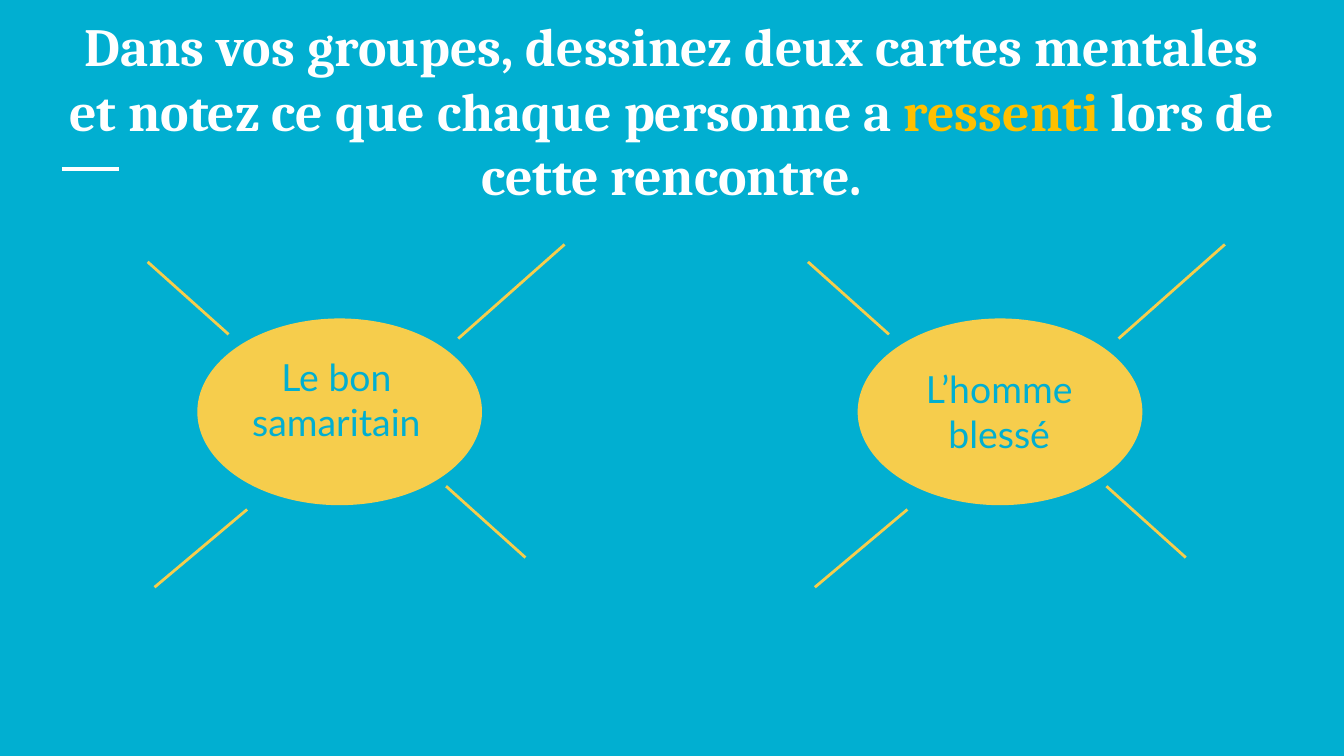
from pptx import Presentation
from pptx.dml.color import RGBColor
from pptx.enum.shapes import MSO_CONNECTOR as Link, MSO_SHAPE as Shape
from pptx.enum.text import MSO_ANCHOR as Anchor, PP_ALIGN as Align
from pptx.oxml.ns import qn
from pptx.util import Cm, Pt
from lxml.etree import SubElement

BLUE = RGBColor(0x01, 0xAF, 0xD1)
WHITE = RGBColor(0xFF, 0xFF, 0xFF)
GOLD = RGBColor(0xFF, 0xC0, 0x00)
SUN = RGBColor(0xF6, 0xCD, 0x4C)

TITLE = [
    ("Dans vos groupes, dessinez deux cartes mentales et notez ce que chaque personne a ", WHITE),
    ("ressenti", GOLD),
    (" lors de cette rencontre.", WHITE),
]
MAPS = [
    ("Le bon samaritain", (4.47, 6.45, 3.78, 2.24)),
    ("L’homme blessé", (16.74, 6.68, 4.29, 2.24)),
]
RAYS = [
    (4.32, 6.32, 2.79, 4.95),
    (9.93, 10.54, 8.43, 9.19),
    (2.92, 11.1, 4.67, 9.63),
    (8.66, 6.4, 10.67, 4.62),
]
OVAL = (3.73, 6.02, 5.38, 3.53)
STEP = 12.48


def add_text(slide, runs, box, font="Lato", size=20, bold=False):
    frame = slide.shapes.add_textbox(*map(Cm, box)).text_frame
    frame.word_wrap = True
    frame.vertical_anchor = Anchor.TOP
    frame.margin_left = frame.margin_right = Cm(0.25)
    frame.margin_top = frame.margin_bottom = Cm(0.25)
    para = frame.paragraphs[0]
    para.alignment = Align.CENTER
    for text, color in runs:
        run = para.add_run()
        run.text = text
        run.font.name = font
        run.font.size = Pt(size)
        run.font.bold = bold
        run.font.color.rgb = color


def add_line(slide, ends, color, width):
    line = slide.shapes.add_connector(Link.STRAIGHT, *map(Cm, ends))
    line.line.color.rgb = color
    line.line.width = Pt(width)
    SubElement(line._element.spPr, qn("a:effectLst"))


def add_oval(slide, box):
    oval = slide.shapes.add_shape(Shape.OVAL, *map(Cm, box))
    oval.shadow.inherit = False
    oval.fill.solid()
    oval.fill.fore_color.rgb = SUN
    oval.line.fill.background()


def main():
    deck = Presentation()
    deck.slide_width, deck.slide_height = Cm(25.4), Cm(14.29)
    slide = deck.slides.add_slide(deck.slide_layouts[6])
    slide.background.fill.solid()
    slide.background.fill.fore_color.rgb = BLUE

    add_line(slide, (1.17, 3.2, 2.24, 3.2), WHITE, 2.25)
    add_text(slide, TITLE, (0.86, 0, 23.67, 1.8), font="Cambria", size=28.8, bold=True)

    for i, (name, box) in enumerate(MAPS):
        shift = i * STEP
        left, top, width, height = OVAL
        add_oval(slide, (left + shift, top, width, height))
        add_text(slide, [(name, BLUE)], box)
        for x1, y1, x2, y2 in RAYS:
            add_line(slide, (x1 + shift, y1, x2 + shift, y2), SUN, 1.5)

    deck.save("out.pptx")


if __name__ == "__main__":
    main()
